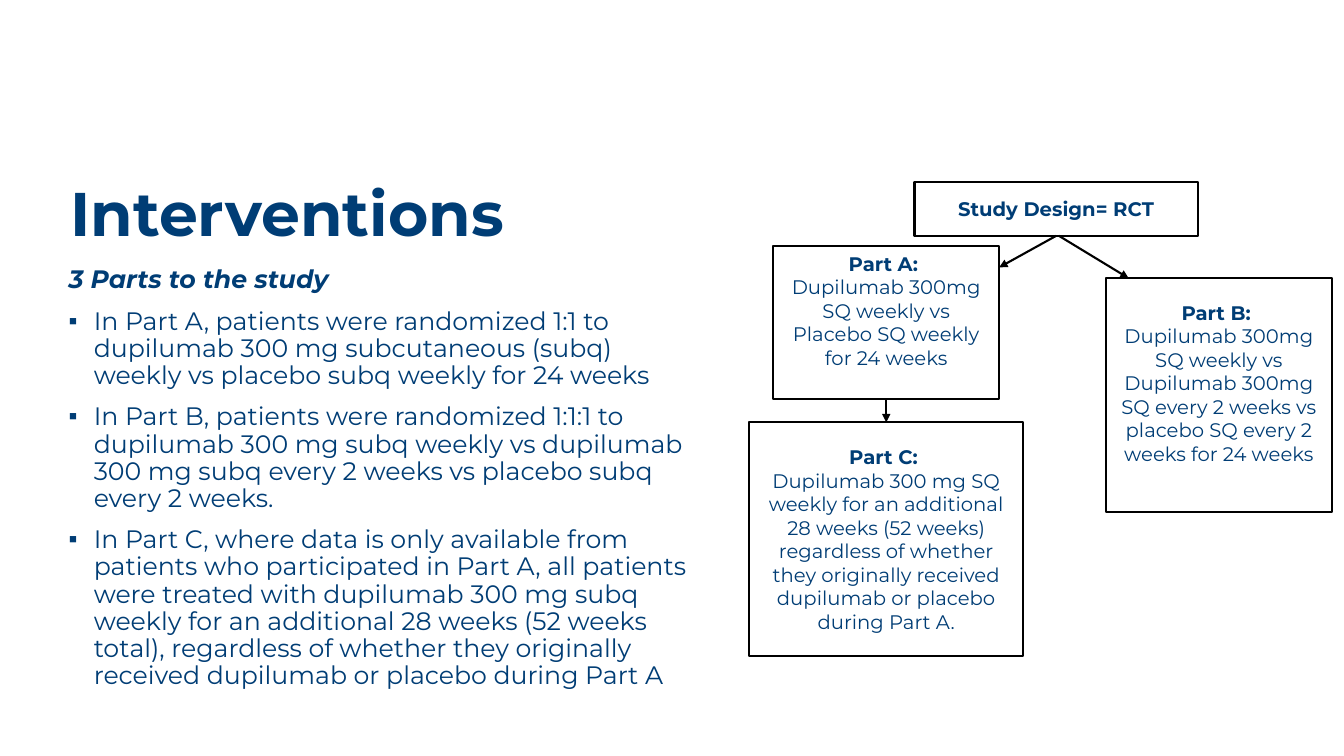
import pptx
import pptx.dml.color
import pptx.enum.shapes
import pptx.enum.text
import pptx.oxml
import pptx.oxml.ns
import pptx.util

NAVY = pptx.dml.color.RGBColor(0x00, 0x3D, 0x75)
BLACK = pptx.dml.color.RGBColor(0x00, 0x00, 0x00)
FONT = "Montserrat"
LEFT, CENTER = pptx.enum.text.PP_ALIGN.LEFT, pptx.enum.text.PP_ALIGN.CENTER
TOP, MIDDLE = pptx.enum.text.MSO_ANCHOR.TOP, pptx.enum.text.MSO_ANCHOR.MIDDLE

TITLE = "Interventions"
SUBTITLE = "3 Parts to the study"
BULLETS = [
    "In Part A, patients were randomized 1:1 to dupilumab 300 mg subcutaneous (subq) weekly vs placebo subq weekly for 24 weeks",
    "In Part B, patients were randomized 1:1:1 to dupilumab 300 mg subq weekly vs dupilumab 300 mg subq every 2 weeks vs placebo subq every 2 weeks.",
    "In Part C, where data is only available from patients who participated in Part A, all patients were treated with dupilumab 300 mg subq weekly for an additional 28 weeks (52 weeks total), regardless of whether they originally received dupilumab or placebo during Part A",
]
DESIGN = {
    "Study": ["Study Design= RCT"],
    "A": ["Part A: ", "Dupilumab 300mg SQ weekly vs Placebo SQ weekly for 24 weeks"],
    "B": ["Part B: ", "Dupilumab 300mg SQ weekly vs Dupilumab 300mg SQ every 2 weeks vs placebo SQ every 2 weeks for 24 weeks"],
    "C": [
        "Part C: ",
        "Dupilumab 300 mg SQ weekly for an additional 28 weeks (52 weeks)",
        "regardless of whether they originally received dupilumab or placebo during Part A.",
    ],
}

CELL = pptx.util.Inches(0.1)
TITLE_AREA = (6, 17, 115, 9)
BODY_AREA = (5.8, 26, 64.9, 40.9)
BOX_AREAS = {
    "Study": (90.7, 18.1, 28.1, 5.3),
    "A": (76.7, 24.4, 22.4, 15.2),
    "B": (109.7, 27.6, 22.4, 23.2),
    "C": (74.3, 41.9, 27.2, 23.2),
}
BOX_INSET = 1.3
BOTTOM_INSETS = {"A": 3.7, "B": 3.7}
ARROWS = [
    (("Study", 0.5, 1), ("A", 1, 0.14)),
    (("Study", 0.51, 1), ("B", 0.1, 0)),
    (("A", 0.5, 1), ("C", 0.5, 0)),
]

TITLE_FORMAT = {"size": pptx.util.Pt(44), "bold": True}
SUBTITLE_FORMAT = {"size": pptx.util.Pt(18), "bold": True, "italic": True}
BULLET_FORMAT = {"size": pptx.util.Pt(18), "bold": False, "italic": False}
HEADING_FORMAT = {"size": pptx.util.Pt(14), "bold": True}
DETAIL_FORMAT = {"size": pptx.util.Pt(14), "bold": False}
TEXT_SPACING = {"line_spacing": 0.9, "alignment": LEFT}


def cells(values):
    return [round(value * CELL) for value in values]


def apply(target, values):
    for name, value in values.items():
        setattr(target, name, value)


def place(shape, area):
    apply(shape, dict(zip(("left", "top", "width", "height"), cells(area))))


def add_xml(parent, tag, **attributes):
    element = pptx.oxml.parse_xml(f"<a:{tag} {pptx.oxml.ns.nsdecls('a')}/>")
    for name, value in attributes.items():
        element.set(name, value)
    parent.append(element)


def write(frame, entries, paragraph_format):
    for index, (text, font_format) in enumerate(entries):
        paragraph = frame.paragraphs[0] if index == 0 else frame.add_paragraph()
        apply(paragraph, paragraph_format)
        run = paragraph.add_run()
        run.text = text
        apply(run.font, {"name": FONT, **font_format})
        run.font.color.rgb = NAVY


def set_frame(frame, anchor):
    apply(frame, {
        "word_wrap": True,
        "auto_size": pptx.enum.text.MSO_AUTO_SIZE.NONE,
        "vertical_anchor": anchor,
    })


def add_outline(slide):
    title, body = slide.shapes.title, slide.placeholders[1]
    place(title, TITLE_AREA)
    place(body, BODY_AREA)
    set_frame(title.text_frame, MIDDLE)
    set_frame(body.text_frame, TOP)
    write(title.text_frame, [(TITLE, TITLE_FORMAT)], TEXT_SPACING)
    entries = [(SUBTITLE, SUBTITLE_FORMAT)] + [(text, BULLET_FORMAT) for text in BULLETS]
    write(body.text_frame, entries, TEXT_SPACING)
    for index, paragraph in enumerate(body.text_frame.paragraphs):
        paragraph.space_before = pptx.util.Pt(10 if index else 0)
        properties = paragraph._p.get_or_add_pPr()
        indent = pptx.util.Inches(0.25) if index else 0
        properties.set("marL", str(indent))
        properties.set("indent", str(-indent))
        if index:
            add_xml(properties, "buChar", char="▪")
        else:
            add_xml(properties, "buNone")


def add_box(slide, name):
    box = slide.shapes.add_shape(
        pptx.enum.shapes.MSO_SHAPE.RECTANGLE, *cells(BOX_AREAS[name])
    )
    box.shadow.inherit = False
    box.fill.background()
    box.line.color.rgb = BLACK
    box.line.width = pptx.util.Pt(1.5)
    frame = box.text_frame
    set_frame(frame, MIDDLE)
    sides = ("margin_left", "margin_top", "margin_right", "margin_bottom")
    insets = [BOX_INSET] * 3 + [BOTTOM_INSETS.get(name, BOX_INSET)]
    apply(frame, dict(zip(sides, cells(insets))))
    heading, *details = DESIGN[name]
    entries = [(heading, HEADING_FORMAT)] + [(text, DETAIL_FORMAT) for text in details]
    write(frame, entries, {"alignment": CENTER})


def point_on(name, across, down):
    left, top, width, height = BOX_AREAS[name]
    return cells((left + across * width, top + down * height))


def add_arrow(slide, start, end):
    arrow = slide.shapes.add_connector(
        pptx.enum.shapes.MSO_CONNECTOR.STRAIGHT, *point_on(*start), *point_on(*end)
    )
    arrow.line.color.rgb = BLACK
    arrow.line.width = pptx.util.Pt(1.5)
    add_xml(arrow.line._get_or_add_ln(), "tailEnd", type="triangle")
    add_xml(arrow._element.spPr, "effectLst")


def main():
    presentation = pptx.Presentation()
    presentation.slide_width = pptx.util.Inches(13.33)
    presentation.slide_height = pptx.util.Inches(7.5)
    slide = presentation.slides.add_slide(presentation.slide_layouts[1])
    add_outline(slide)
    for name in DESIGN:
        add_box(slide, name)
    for start, end in ARROWS:
        add_arrow(slide, start, end)
    presentation.save("out.pptx")


if __name__ == "__main__":
    main()
